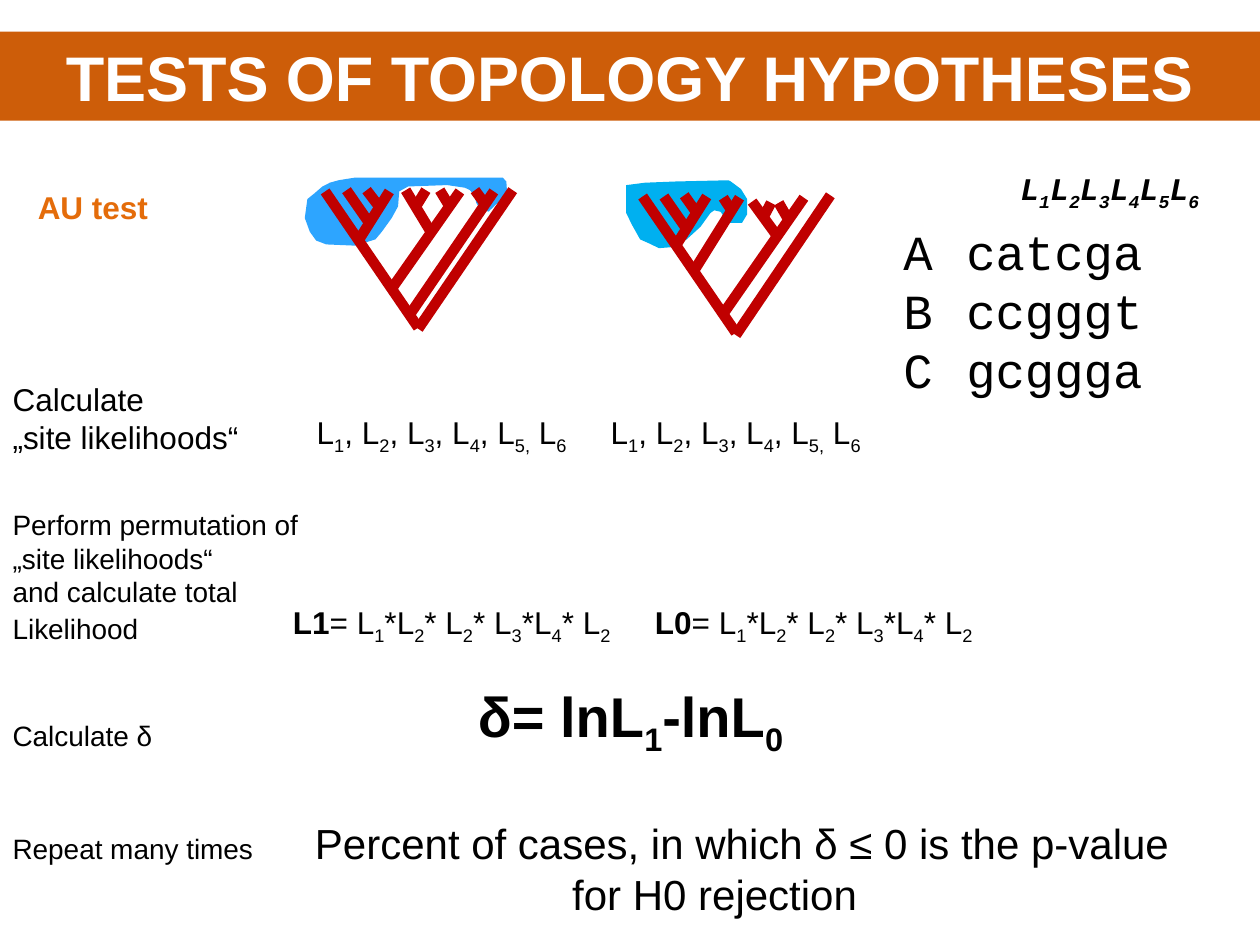
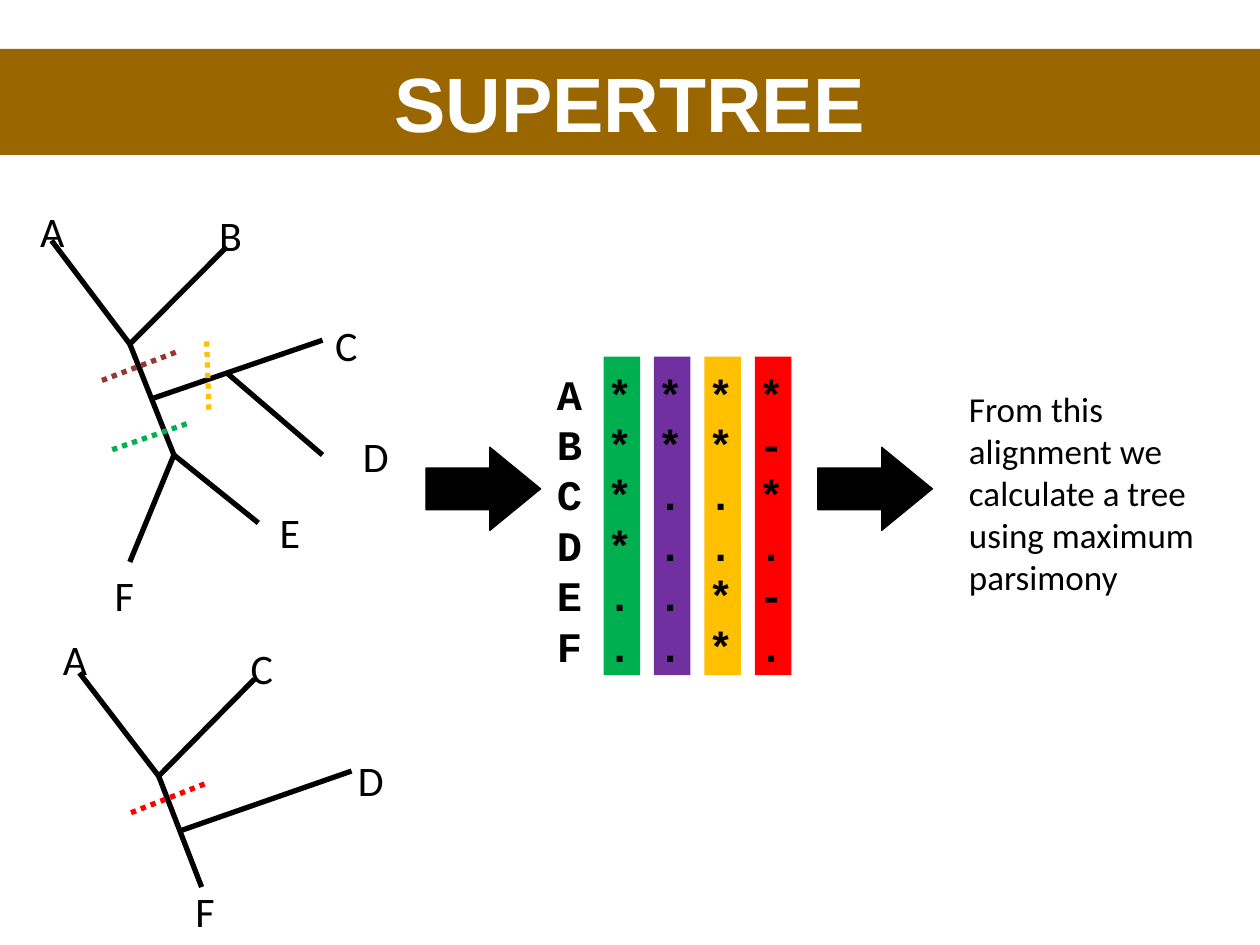
from pptx import Presentation
from pptx.dml.color import RGBColor
from pptx.enum.dml import MSO_LINE
from pptx.enum.shapes import MSO_CONNECTOR, MSO_SHAPE as SHAPE
from pptx.enum.text import PP_ALIGN as ALIGN
from pptx.oxml.ns import qn
from pptx.util import Pt
from lxml.etree import SubElement

SLIDE_WIDTH, SLIDE_HEIGHT = 720, 540
SANS, MONO, LABEL_FONT = "Arial", "Courier New", "Calibri"
DESCENT = {SANS: 0.21, MONO: 0.3, LABEL_FONT: 0.27}
LINE_PITCH = 1.2
BLACK, WHITE, ORANGE = "000000", "FFFFFF", "E46C0A"
BRANCH_RED, GREEN, GOLD, RED = "C00000", "00B050", "FFC000", "FF0000"

# Text markup: |bold| and ~subscript~
SITE_LIKELIHOODS = "L~1~, L~2~, L~3~, L~4~, L~5,~ L~6~"
PERMUTED_PRODUCT = "= L~1~*L~2~* L~2~* L~3~*L~4~* L~2~"

AU_TEXTS = [
    (7.2, 235, 160, 18, ["Calculate", "„site likelihoods“"]),
    (181, 256.6, 160, 18, [SITE_LIKELIHOODS]),
    (349, 256.6, 160, 18, [SITE_LIKELIHOODS]),
    (7.2, 306, 190, 16, ["Perform permutation of", "„site likelihoods“", "and calculate total"]),
    (7.2, 365.5, 100, 16, ["Likelihood"]),
    (167.4, 365.5, 200, 18, ["|L1|" + PERMUTED_PRODUCT]),
    (374.3, 365.5, 200, 18, ["|L0|" + PERMUTED_PRODUCT]),
    (7.2, 426.5, 110, 16, ["Calculate δ"]),
    (273.1, 426.5, 220, 32, ["|δ= lnL~1~-lnL~0~|"]),
    (7.2, 491, 160, 16, ["Repeat many times"]),
    (180, 491, 520, 24, ["Percent of cases, in which δ ≤ 0 is the p-value"]),
    (327, 519.8, 200, 24, ["for H0 rejection"]),
]

SITE_HEADER = "|L~1~L~2~L~3~L~4~L~5~L~6~|"
SITE_ROWS = ["A\tcatcga", "B\tccgggt", "C\tgcggga"]

CLADES = [
    ("00B0F0", [
        (357.8, 105.8), (357.8, 121.7), (361.4, 128.9), (365.8, 136.8), (370.8, 139),
        (376.6, 141.8), (385.2, 141.1), (392.4, 136.8), (400.3, 129.6), (406, 121.7),
        (408.2, 120.2), (411.8, 121), (416.2, 127.4), (424, 127.4), (427, 122.4),
        (427, 113.8), (423.4, 108), (417.6, 103.7), (416.2, 103), (386.6, 103.7),
        (368.6, 104.4)]),
    ("2DA5FF", [
        (179.3, 110.9), (184.3, 106.6), (188.6, 104.4), (193.7, 103), (203, 101.5),
        (287.3, 101.5), (289.4, 103.7), (289.8, 110), (288, 112.3), (284.4, 116),
        (280, 120.2), (279.4, 121), (274.3, 119.5), (272.2, 116), (271.4, 112.3),
        (268.6, 108.7), (265.7, 107.3), (255.6, 105.8), (233.3, 106.6), (228.2, 109.4),
        (227.5, 118), (223.9, 124.6), (218.2, 132.5), (214.6, 136.8), (210.2, 138.2),
        (203, 140.4), (186.5, 139.7), (180.7, 137.5), (177.1, 132.5), (174.2, 124.6),
        (175.7, 113.8)]),
]

TOPOLOGY_BRANCHES = [
    (185.8, 109.4, 239, 187.2), (293, 108.7, 239, 187.9), (282.2, 109.4, 234, 180),
    (262.8, 109.4, 223.9, 164.9), (222.5, 109.4, 205.2, 136.8), (198, 108.7, 211, 127.4),
    (209.5, 108.7, 216.7, 118.1), (231.8, 108.7, 246.2, 132.5), (251.3, 108.7, 257, 118.1),
    (271.4, 108.7, 277.2, 116.6), (243.4, 108.7, 237.6, 118.1),
    (367.2, 112.3, 420.5, 190.1), (474.5, 111.6, 420.5, 191.5), (422.6, 113, 397.4, 153.4),
    (459.4, 113, 413.3, 179.3), (403.9, 112.3, 386.6, 139.7), (379.4, 112.3, 392.4, 131),
    (391, 111.6, 398.2, 121.7), (429.8, 115.2, 445, 136.1), (445, 115.9, 450, 124.6),
    (413.3, 113, 419, 121.7), (440.6, 115.9, 435.6, 125.3),
]

SOURCE_BRANCHES = [
    (74.2, 196.6, 29.5, 137.5), (74.2, 196.6, 129.6, 141.1), (74.2, 196.6, 99.4, 260),
    (99.4, 260, 74.2, 321.1), (99.4, 260, 147.6, 298.8), (87.8, 227.5, 184.3, 194.4),
    (129.6, 213.1, 184.3, 260),
    (90.7, 443.5, 45.4, 384.5), (90.7, 443.5, 145.4, 388.1), (90.7, 443.5, 115.2, 506.9),
    (103.7, 474.5, 200.9, 440.6),
]
TAXON_LABELS = [
    ("A", 23, 140), ("B", 125.3, 142), ("C", 191.5, 205), ("E", 159.8, 312),
    ("D", 207.4, 268.5), ("F", 65.5, 348),
    ("A", 36, 384.5), ("C", 143.3, 389.5), ("D", 204.5, 453.5), ("F", 111.6, 528.5),
]
SPLITS = [
    ("953735", (58.3, 217.4, 101.5, 200.9)), (GOLD, (118.1, 195.1, 119.5, 236.9)),
    (GREEN, (64.1, 257, 109.4, 241.2)), (RED, (74.9, 464.4, 117.4, 447.8)),
]
STRIP_COLORS = [GREEN, "7030A0", GOLD, RED]
STRIP_LEFT, STRIP_PITCH = 344.9, 28.8
SPLIT_MATRIX = ["A * * * *", "B * * * -", "C * . . *", "D * . . .", "E . . * -", "F . . * ."]
ARROW_LEFTS = [243.4, 467.3]
CONCLUSION = "From this alignment we calculate a tree using maximum parsimony"


def rgb(value):
    return RGBColor.from_string(value)


def add_block(slide, kind, left, top, width, height, color):
    shape = slide.shapes.add_shape(kind, Pt(left), Pt(top), Pt(width), Pt(height))
    return paint(shape, color)


def paint(shape, color):
    shape.shadow.inherit = False
    shape.fill.solid()
    shape.fill.fore_color.rgb = rgb(color)
    shape.line.fill.background()
    return shape


def add_line(slide, ends, color, weight, dash=None):
    line = slide.shapes.add_connector(MSO_CONNECTOR.STRAIGHT, *[Pt(value) for value in ends])
    line.line.color.rgb = rgb(color)
    line.line.width = Pt(weight)
    if dash:
        line.line.dash_style = dash
    SubElement(line._element.spPr, qn("a:effectLst"))


def add_runs(paragraph, markup):
    for bold_index, piece in enumerate(markup.split("|")):
        for subscript_index, words in enumerate(piece.split("~")):
            if words:
                run = paragraph.add_run()
                run.text = words
                if bold_index % 2:
                    run.font.bold = True
                if subscript_index % 2:
                    run.font._element.set("baseline", "-25000")


def add_text(slide, left, baseline, width, size, lines, font=SANS, color=BLACK,
             bold=None, italic=None):
    pitch = LINE_PITCH * size
    top = baseline - pitch + DESCENT[font] * size
    box = slide.shapes.add_textbox(Pt(left), Pt(top), Pt(width), Pt(pitch * len(lines)))
    frame = box.text_frame
    frame.word_wrap = True
    frame.margin_left = frame.margin_right = frame.margin_top = frame.margin_bottom = 0
    for index, markup in enumerate(lines):
        paragraph = frame.add_paragraph() if index else frame.paragraphs[0]
        paragraph.line_spacing = Pt(pitch)
        paragraph.font.name, paragraph.font.size = font, Pt(size)
        paragraph.font.color.rgb = rgb(color)
        paragraph.font.bold, paragraph.font.italic = bold, italic
        add_runs(paragraph, markup)


def add_title_band(slide, title, top, height, size, color):
    band = add_block(slide, SHAPE.RECTANGLE, 0, top, SLIDE_WIDTH, height, color)
    paragraph = band.text_frame.paragraphs[0]
    paragraph.text = title
    paragraph.alignment = ALIGN.CENTER
    paragraph.font.name, paragraph.font.size = SANS, Pt(size)
    paragraph.font.bold = True
    paragraph.font.color.rgb = rgb(WHITE)


def add_clade(slide, color, outline):
    points = [(Pt(x), Pt(y)) for x, y in outline]
    builder = slide.shapes.build_freeform(*points[0])
    builder.add_line_segments(points[1:], close=True)
    paint(builder.convert_to_shape(), color)


def build_topology_slide(slide):
    add_text(slide, 21.6, 125, 80, 18, ["AU test"], color=ORANGE, bold=True)
    for color, outline in CLADES:
        add_clade(slide, color, outline)
    for ends in TOPOLOGY_BRANCHES:
        add_line(slide, ends, BRANCH_RED, 6)
    add_text(slide, 583, 116, 120, 18, [SITE_HEADER], MONO, italic=True)
    add_text(slide, 516.2, 152, 185, 28, SITE_ROWS, MONO)
    for left, baseline, width, size, lines in AU_TEXTS:
        add_text(slide, left, baseline, width, size, lines)
    add_title_band(slide, "TESTS OF TOPOLOGY HYPOTHESES", 18, 51, 36, "CD5D09")


def build_supertree_slide(slide):
    for index, color in enumerate(STRIP_COLORS):
        left = STRIP_LEFT + index * STRIP_PITCH
        add_block(slide, SHAPE.RECTANGLE, left, 203.8, 20.9, 182, color)
    for ends in SOURCE_BRANCHES:
        add_line(slide, ends, BLACK, 3)
    for taxon, left, baseline in TAXON_LABELS:
        add_text(slide, left, baseline, 20, 24, [taxon], LABEL_FONT)
    for color, ends in SPLITS:
        add_line(slide, ends, color, 3, MSO_LINE.ROUND_DOT)
    add_text(slide, 318.2, 232, 140, 24, SPLIT_MATRIX, MONO, bold=True)
    for left in ARROW_LEFTS:
        arrow = add_block(slide, SHAPE.RIGHT_ARROW, left, 255.6, 65.5, 47.5, BLACK)
        arrow.adjustments[1] = 0.61
        arrow.line.color.rgb = rgb(BLACK)
        arrow.line.width = Pt(0.75)
    add_text(slide, 553.7, 240, 131, 20, [CONCLUSION], LABEL_FONT)
    add_title_band(slide, "SUPERTREE", 28, 60.5, 44, "996600")


def main():
    presentation = Presentation()
    presentation.slide_width, presentation.slide_height = Pt(SLIDE_WIDTH), Pt(SLIDE_HEIGHT)
    blank = presentation.slide_layouts[6]
    for build in (build_topology_slide, build_supertree_slide):
        build(presentation.slides.add_slide(blank))
    presentation.save("out.pptx")


if __name__ == "__main__":
    main()
